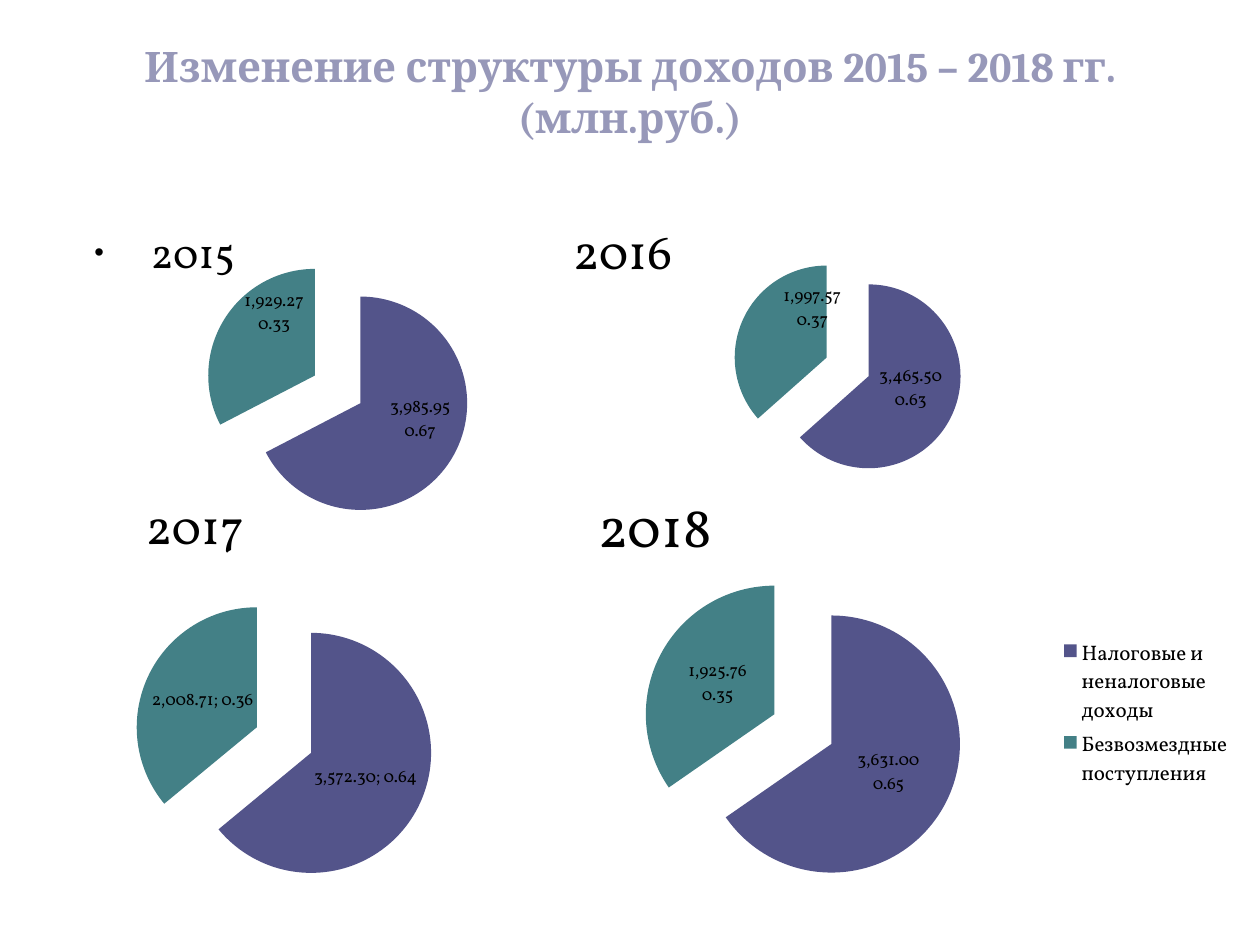
"""Build a slide of four exploded pies showing income structure by year."""
import copy

import lxml.etree
import pptx
import pptx.chart.data
import pptx.dml.color
import pptx.enum.chart
import pptx.enum.text
import pptx.oxml
import pptx.oxml.ns
import pptx.util

RGB = pptx.dml.color.RGBColor
BLACK = RGB(0x00, 0x00, 0x00)
LILAC = RGB(0x97, 0x98, 0xB9)
BLUE = RGB(0x53, 0x54, 0x8A)
TEAL = RGB(0x43, 0x80, 0x86)
FACE = "Vollkorn"
ALIGN = pptx.enum.text.PP_ALIGN
qn = pptx.oxml.ns.qn

deck = pptx.Presentation()
deck.slide_width = pptx.util.Inches(10)
deck.slide_height = pptx.util.Inches(7.5)
COL = deck.slide_width / 100
ROW = deck.slide_height / 75
slide = deck.slides.add_slide(deck.slide_layouts[6])


def grid(left, top, wide, high):
    return [round(n) for n in (left * COL, top * ROW, wide * COL, high * ROW)]


def style(font, size, face=FACE, tint=BLACK, bold=False):
    for key, val in {"size": pptx.util.Pt(size), "name": face, "bold": bold}.items():
        setattr(font, key, val)
    font.color.rgb = tint


plain = {"wrap": False}
texts = [
    ("Изменение структуры доходов 2015 – 2018 гг. (млн.руб.)", (5, 3, 90, 8.5),
     {"size": 24, "face": "Cambria", "tint": LILAC, "bold": True},
     {"word_wrap": True, "vertical_anchor": pptx.enum.text.MSO_ANCHOR.MIDDLE}, ALIGN.CENTER),
    ("2015", (5, 17.5, 90, 51.5), {"size": 24}, {"word_wrap": True}, ALIGN.LEFT),
    ("2016", (44.5, 17, 9.9, 5.7), {"size": 28}, {"word_wrap": False}, ALIGN.LEFT),
    ("2018", (46.5, 38.5, 11, 6.4), {"size": 32}, {"word_wrap": False}, ALIGN.LEFT),
    ("2017", (10.6, 38.8, 9.9, 5.7), {"size": 28}, {"word_wrap": False}, ALIGN.LEFT),
]

names = ["Налоговые и неналоговые доходы", "Безвозмездные поступления"]
pies = [
    ((5.9, 14.7, 37, 26.8), (3985.95, 1929.27), (0.15, 0.21, 0.83, 0.79), "\n",
     [(0.03, -0.03), (0.01, -0.1)], False),
    ((48.4, 17, 36.3, 23.1), (3465.5, 1997.57), (0.1, 0.13, 0.84, 0.79), "\n",
     [(0, -0.02), (0.06, -0.1)], False),
    ((3.5, 45.4, 34, 28.7), (3572.3, 2008.71), (0.12, 0.05, 0.88, 0.83), "; ", [], False),
    ((47.6, 40.6, 51.2, 32.3), (3631, 1925.76), (0.02, 0.14, 0.59, 0.79), "\n", [], True),
]

for area, vals, plot, sep, moves, key in pies:
    data = pptx.chart.data.CategoryChartData(number_format="#,##0.00")
    data.categories = names if key else ["1", "2"]
    data.add_series("Series 1", vals)
    kind = pptx.enum.chart.XL_CHART_TYPE.PIE
    chart = slide.shapes.add_chart(kind, *grid(*area), data).chart
    style(chart.font, 18)
    for name, val in {"has_title": False, "has_legend": key}.items():
        setattr(chart, name, val)
    if key:
        chart.legend.position = pptx.enum.chart.XL_LEGEND_POSITION.RIGHT
        chart.legend.include_in_layout = False
        style(chart.legend.font, 12)

    pie = chart.plots[0]
    pie.vary_by_categories = True
    row = pie.series[0]
    for idx, tint in enumerate((BLUE, TEAL)):
        fill = row.points[idx].format.fill
        fill.solid()
        fill.fore_color.rgb = tint
    burst = lxml.etree.Element(qn("c:explosion"), val="25")
    row._element.find(qn("c:tx")).addnext(burst)

    tags = row.data_labels
    look = {"show_value": True, "show_percentage": True, "number_format": "#,##0.00",
            "number_format_is_linked": False,
            "position": pptx.enum.chart.XL_LABEL_POSITION.CENTER}
    for name, val in look.items():
        setattr(tags, name, val)
    style(tags.font, 10)
    root = tags._element
    split = lxml.etree.Element(qn("c:separator"))
    split.text = sep
    root.find(qn("c:showBubbleSize")).addnext(split)

    parts = [part for part in root if part.tag != qn("c:showLeaderLines")]
    for idx, move in enumerate(moves):
        tag = lxml.etree.Element(qn("c:dLbl"))
        lxml.etree.SubElement(tag, qn("c:idx"), val=str(idx))
        frame = lxml.etree.SubElement(tag, qn("c:layout"))
        spot = lxml.etree.SubElement(frame, qn("c:manualLayout"))
        for name, val in zip("xy", move):
            lxml.etree.SubElement(spot, qn("c:" + name), val=str(val))
        tag.extend([copy.deepcopy(part) for part in parts])
        root.insert(idx, tag)

    zone = chart._chartSpace.chart.plotArea
    for old in zone.findall(qn("c:layout")):
        zone.remove(old)
    frame = lxml.etree.Element(qn("c:layout"))
    spot = lxml.etree.SubElement(frame, qn("c:manualLayout"))
    modes = {"layoutTarget": "inner", "xMode": "edge", "yMode": "edge"}
    for name, val in {**modes, **dict(zip("xywh", plot))}.items():
        lxml.etree.SubElement(spot, qn("c:" + name), val=str(val))
    zone.insert(0, frame)

for words, area, look, body, side in texts:
    frame = slide.shapes.add_textbox(*grid(*area)).text_frame
    for name, val in body.items():
        setattr(frame, name, val)
    para = frame.paragraphs[0]
    para.alignment = side
    run = para.add_run()
    run.text = words
    style(run.font, **look)
    if words == "2015":
        props = para._p.get_or_add_pPr()
        for name, share in {"marL": 6, "indent": -4.5}.items():
            props.set(name, str(round(share * COL)))
        lxml.etree.SubElement(props, qn("a:buSzPct"), val="65000")
        lxml.etree.SubElement(props, qn("a:buFont"), typeface="Arial")
        lxml.etree.SubElement(props, qn("a:buChar"), char="•")

deck.save("out.pptx")
